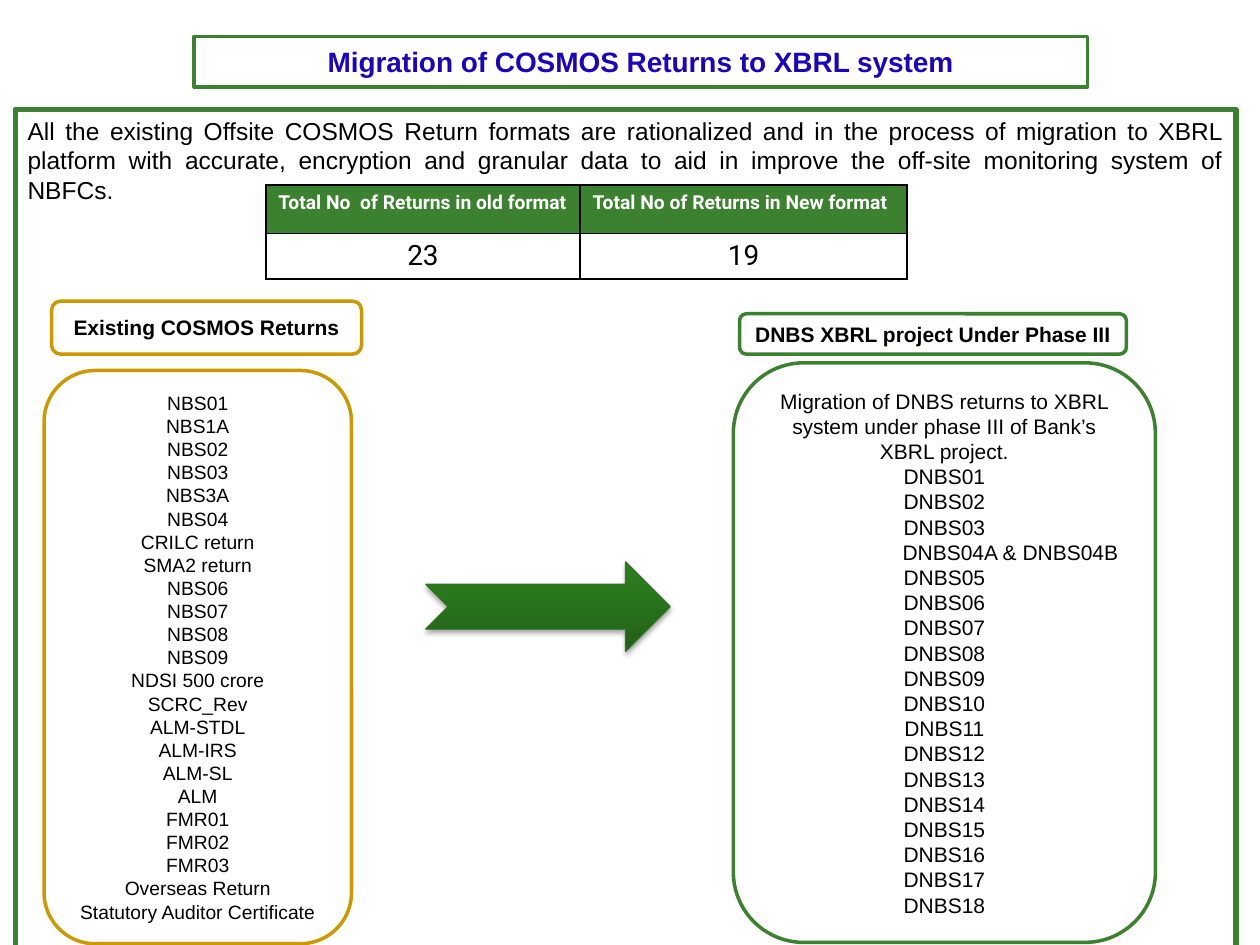
from dataclasses import dataclass

from lxml.etree import SubElement
from pptx import Presentation
from pptx.dml.color import RGBColor
from pptx.enum.shapes import MSO_SHAPE
from pptx.enum.text import MSO_ANCHOR, PP_ALIGN
from pptx.oxml.ns import qn
from pptx.util import Inches, Pt

BLACK = RGBColor(0x00, 0x00, 0x00)
WHITE = RGBColor(0xFF, 0xFF, 0xFF)
GREEN = RGBColor(0x3B, 0x81, 0x2F)
GOLD = RGBColor(0xCC, 0x99, 0x00)
TITLE_BLUE = RGBColor(0x1A, 0x04, 0xBC)
ARROW_DARK = RGBColor(0x22, 0x5F, 0x17)
ARROW_LIGHT = RGBColor(0x2C, 0x7B, 0x1E)
ARROW_EDGE = RGBColor(0x33, 0x73, 0x27)

SLIDE_WIDTH, SLIDE_HEIGHT = Inches(10), Inches(7.5)
COLUMN, ROW = SLIDE_WIDTH / 100, SLIDE_HEIGHT / 75

INTRO = (
    "All the existing Offsite COSMOS Return formats are rationalized and in the "
    "process of migration to XBRL platform with accurate, encryption and granular "
    "data to aid in improve the off-site monitoring system of NBFCs."
)
COUNTS = [
    ("Total No  of Returns in old format", "23"),
    ("Total No of Returns in New format", "19"),
]
OLD_RETURNS = [
    "NBS01", "NBS1A", "NBS02", "NBS03", "NBS3A", "NBS04", "CRILC return",
    "SMA2 return", "NBS06", "NBS07", "NBS08", "NBS09", "NDSI 500 crore",
    "SCRC_Rev", "ALM-STDL", "ALM-IRS", "ALM-SL", "ALM", "FMR01", "FMR02",
    "FMR03", "Overseas Return", "Statutory Auditor Certificate",
]
SPLIT_RETURN = "DNBS04A & DNBS04B"
NEW_RETURNS = [
    "Migration of DNBS returns to XBRL system under phase III of Bank’s XBRL project.",
    "DNBS01", "DNBS02", "DNBS03", SPLIT_RETURN,
    *(f"DNBS{number:02d}" for number in range(5, 19)),
]


@dataclass
class Box:
    """A region in grid columns and rows."""

    left: float
    top: float
    width: float
    height: float

    def inner(self, left, top, width, height):
        """Return a region offset from this one's corner."""
        return Box(self.left + left, self.top + top, width, height)

    def place(self):
        """Return left, top, width and height in slide units."""
        return (round(self.left * COLUMN), round(self.top * ROW),
                round(self.width * COLUMN), round(self.height * ROW))


def write(paragraph, wording, size, color=BLACK, bold=False, font="Arial",
          align=PP_ALIGN.CENTER):
    """Add one formatted run to a paragraph."""
    paragraph.alignment = align
    run = paragraph.add_run()
    run.text = wording
    run.font.size, run.font.name, run.font.bold = Pt(size), font, bold
    run.font.color.rgb = color


def add_frame(slide, box, outline, kind=MSO_SHAPE.ROUNDED_RECTANGLE, weight=2,
              anchor=MSO_ANCHOR.MIDDLE):
    """Add a white outlined shape and return its text frame."""
    frame = slide.shapes.add_shape(kind, *box.place())
    frame.shadow.inherit = False
    frame.fill.solid()
    frame.fill.fore_color.rgb = WHITE
    frame.line.color.rgb = outline
    frame.line.width = Pt(weight)
    frame.text_frame.word_wrap = True
    frame.text_frame.vertical_anchor = anchor
    return frame.text_frame


def add_title(slide, box):
    """Place the slide heading."""
    title = add_frame(slide, box, GREEN, MSO_SHAPE.RECTANGLE)
    write(title.paragraphs[0], "Migration of COSMOS Returns to XBRL system",
          16, TITLE_BLUE, bold=True)


def add_intro(slide, box):
    """Place the large frame with the introduction."""
    intro = add_frame(slide, box, GREEN, MSO_SHAPE.RECTANGLE, 3, MSO_ANCHOR.TOP)
    write(intro.paragraphs[0], INTRO, 14, align=PP_ALIGN.JUSTIFY)


def outline_cell(cell):
    """Give a table cell thin black borders."""
    properties = cell._tc.get_or_add_tcPr()
    for position, side in enumerate(("a:lnL", "a:lnR", "a:lnT", "a:lnB")):
        border = SubElement(properties, qn(side), w=str(Pt(1)))
        fill = SubElement(border, qn("a:solidFill"))
        SubElement(fill, qn("a:srgbClr"), val=str(BLACK))
        properties.insert(position, border)


def add_counts(slide, box):
    """Place the table of return counts."""
    table = slide.shapes.add_table(2, len(COUNTS), *box.place()).table
    for column, share in zip(table.columns, (0.49, 0.51)):
        column.width = round(box.width * share * COLUMN)
    for row, share in zip(table.rows, (0.52, 0.48)):
        row.height = round(box.height * share * ROW)
    for index, (label, count) in enumerate(COUNTS):
        header, value = table.cell(0, index), table.cell(1, index)
        for cell, color in ((header, GREEN), (value, WHITE)):
            cell.fill.solid()
            cell.fill.fore_color.rgb = color
            outline_cell(cell)
        write(header.text_frame.paragraphs[0], label, 11, WHITE, True, "Roboto",
              PP_ALIGN.LEFT)
        write(value.text_frame.paragraphs[0], count, 16, font="Roboto")


def add_returns(slide, box, heading, heading_box, returns, gap, size, outline):
    """Place a heading above a rounded list of returns."""
    label = add_frame(slide, box.inner(*heading_box), outline)
    write(label.paragraphs[0], heading, 12, bold=True)
    list_top = heading_box[3] + gap
    listing = add_frame(
        slide, box.inner(0, list_top, box.width, box.height - list_top), outline)
    for index, name in enumerate(returns):
        paragraph = listing.add_paragraph() if index else listing.paragraphs[0]
        if name == SPLIT_RETURN:
            paragraph._p.get_or_add_pPr().set("marL", str(round(10.5 * COLUMN)))
        write(paragraph, name, size)


def add_arrow(slide, box):
    """Place the shaded arrow from old returns to new ones."""
    arrow = slide.shapes.add_shape(MSO_SHAPE.NOTCHED_RIGHT_ARROW, *box.place())
    arrow.fill.gradient()
    arrow.fill.gradient_angle = 90
    shades = ((0, ARROW_DARK), (0.8, ARROW_LIGHT))
    for stop, (position, color) in zip(arrow.fill.gradient_stops, shades):
        stop.position = position
        stop.color.rgb = color
    arrow.line.color.rgb = ARROW_EDGE
    arrow.line.width = Pt(0.75)
    arrow.shadow.inherit = False
    effects = arrow._element.spPr.find(qn("a:effectLst"))
    shadow = SubElement(effects, qn("a:outerShdw"), blurRad=str(Pt(3.1)),
                        dist=str(Pt(1.8)), dir="5400000", rotWithShape="0")
    tint = SubElement(shadow, qn("a:srgbClr"), val=str(BLACK))
    SubElement(tint, qn("a:alpha"), val="35000")


def main():
    """Build and save the slide."""
    deck = Presentation()
    deck.slide_width, deck.slide_height = SLIDE_WIDTH, SLIDE_HEIGHT
    slide = deck.slides.add_slide(deck.slide_layouts[6])
    add_intro(slide, Box(1.2, 8.7, 96.9, 67.4))
    add_counts(slide, Box(21.1, 14.7, 50.9, 7.4))
    add_title(slide, Box(15.4, 2.9, 70.9, 4))
    add_returns(slide, Box(3.5, 23.9, 24.4, 51), "Existing COSMOS Returns",
                (0.6, 0, 24.6, 4.2), OLD_RETURNS, 1.3, 11, GOLD)
    add_returns(slide, Box(58.2, 24.9, 33.5, 49.9),
                "DNBS XBRL project Under Phase III",
                (0.5, 0, 30.7, 3.2), NEW_RETURNS, 0.7, 12, GREEN)
    add_arrow(slide, Box(33.8, 44.6, 19.4, 7.1))
    deck.save("out.pptx")


if __name__ == "__main__":
    main()
